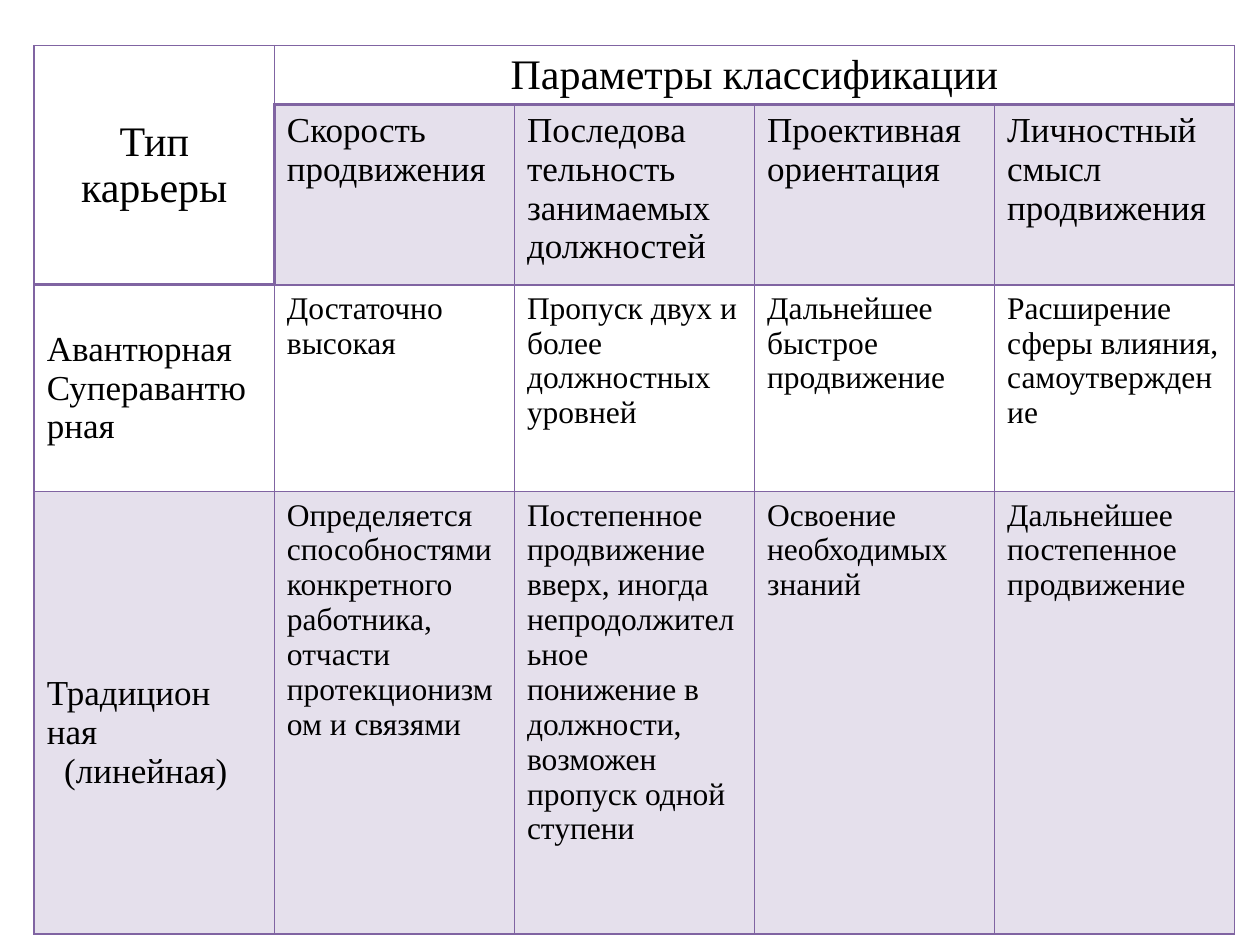
from lxml.etree import SubElement
from pptx import Presentation
from pptx.dml.color import RGBColor
from pptx.enum.text import MSO_ANCHOR as ANCHOR, PP_ALIGN as ALIGN
from pptx.oxml.ns import qn
from pptx.util import Cm, Pt

ROW_HEIGHTS = [1.19, 3.63, 4.17, 8.92]
COLUMN_WIDTH = 4.84
ROWS = [
    ["Тип карьеры", "Параметры классификации", "", "", ""],
    ["", "Скорость\nпродвижения", "Последова\nтельность занимаемых должностей",
     "Проективная ориентация", "Личностный смысл продвижения"],
    ["Авантюрная\nСуперавантюрная", "Достаточно высокая",
     "Пропуск двух и более должностных уровней",
     "Дальнейшее быстрое продвижение",
     "Расширение сферы влияния, самоутверждение"],
    ["Традицион\nная\n(линейная)",
     "Определяется способностями конкретного работника, отчасти "
     "протекционизмом и связями",
     "Постепенное продвижение вверх, иногда непродолжительное понижение "
     "в должности, возможен пропуск одной ступени",
     "Освоение необходимых знаний", "Дальнейшее постепенное продвижение"],
]


def rgb(value):
    return RGBColor.from_string(value)


class SlideBuilder:
    font = "Times New Roman"
    ink = "000000"
    accent = "8064A2"
    tint = 20

    def __init__(self, prs):
        self.s = prs.slides.add_slide(prs.slide_layouts[6])

    def table(self, left, top, width, heights, columns):
        shape = self.s.shapes.add_table(len(heights), columns, Cm(left), Cm(top),
                                        Cm(width * columns), Cm(sum(heights)))
        table = shape.table
        table.first_row = table.horz_banding = False
        for column in table.columns:
            column.width = Cm(width)
        for row, height in zip(table.rows, heights):
            row.height = Cm(height)
        return table

    def text(self, cell, text, size, align=ALIGN.LEFT):
        tf = cell.text_frame
        tf.text = text
        for p in tf.paragraphs:
            p.alignment = align
            p.font.name = self.font
            p.font.size = Pt(size)
            p.font.color.rgb = rgb(self.ink)

    def borders(self, cell, heavy):
        tc_pr = cell._tc.get_or_add_tcPr()
        for side in "LRTB":
            line = SubElement(tc_pr, qn(f"a:ln{side}"),
                              w=str(Pt(2 if side in heavy else 1)))
            fill = SubElement(line, qn("a:solidFill"))
            SubElement(fill, qn("a:srgbClr"), val=self.accent)

    def fill(self, cell, tinted):
        if not tinted:
            cell.fill.background()
            return
        cell.fill.solid()
        cell.fill.fore_color.rgb = rgb(self.accent)
        color = cell._tc.tcPr.find(qn("a:solidFill")).find(qn("a:srgbClr"))
        SubElement(color, qn("a:alpha"), val=str(self.tint * 1000))


def heavy_sides(row, col):
    if row == 0:
        return "B"
    if row == 1:
        return {0: "B", 1: "LT"}.get(col, "T")
    return "T" if (row, col) == (2, 0) else ""


def main():
    prs = Presentation()
    prs.slide_width, prs.slide_height = Cm(25.4), Cm(19.05)
    builder = SlideBuilder(prs)
    table = builder.table(0.69, 0.92, COLUMN_WIDTH, ROW_HEIGHTS, len(ROWS[0]))

    for i, texts in enumerate(ROWS):
        for j, text in enumerate(texts):
            cell = table.cell(i, j)
            builder.borders(cell, heavy_sides(i, j))
            builder.fill(cell, i == 3 or (i == 1 and j > 0))
            if text:
                size = 24 if i == 0 else 20 if i == 1 or j == 0 else 18
                align = ALIGN.CENTER if i == 0 else ALIGN.LEFT
                builder.text(cell, text, size, align)

    table.cell(0, 0).merge(table.cell(1, 0))
    table.cell(0, 1).merge(table.cell(0, 4))
    for i in (0, 3):
        table.cell(i, 0).vertical_anchor = ANCHOR.MIDDLE
    for i in (2, 3):
        table.cell(i, 0).margin_top = Cm(0.91)
    subtype = table.cell(3, 0).text_frame.paragraphs[-1]
    subtype._p.get_or_add_pPr().set("marL", str(Cm(0.35)))

    prs.save("out.pptx")


if __name__ == "__main__":
    main()
